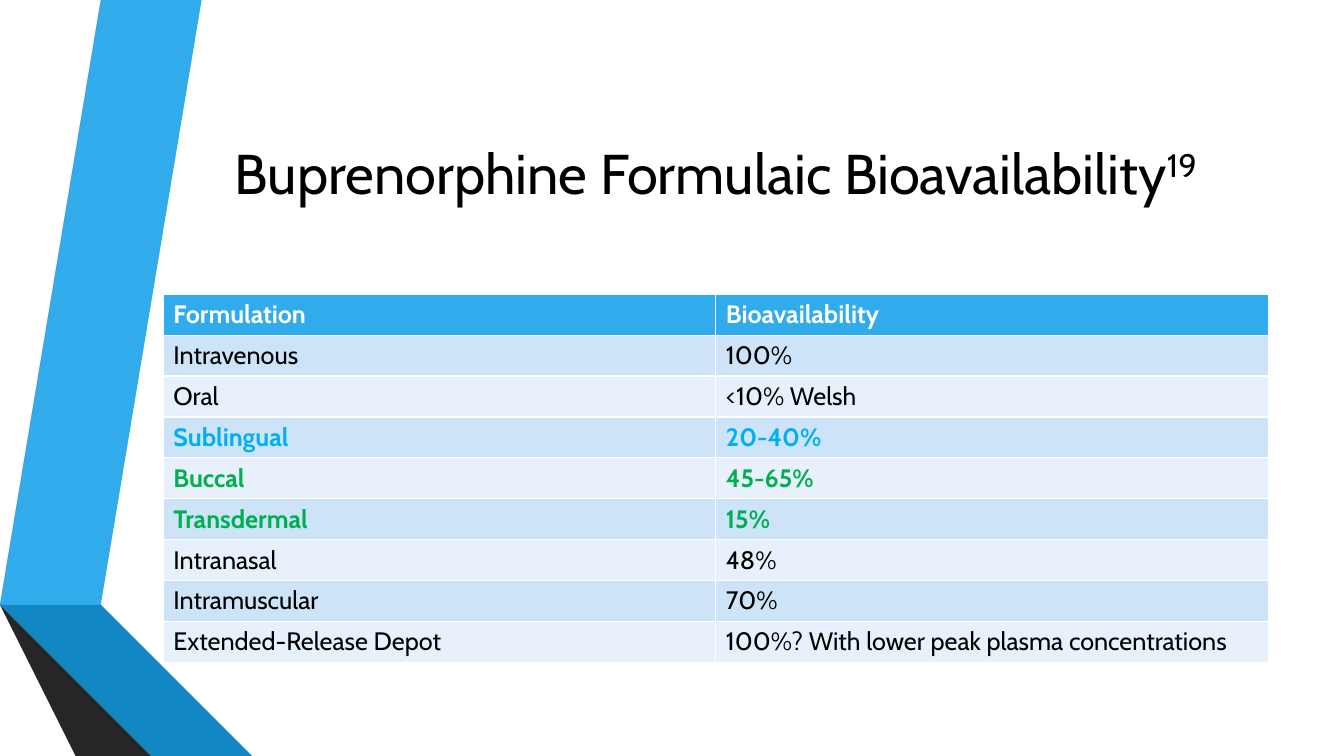
import pptx
import pptx.dml.color
import pptx.enum.text
import pptx.util

Inches = pptx.util.Inches
FONT = "Cabin"
COLORS = {
    "black": "000000",
    "white": "FFFFFF",
    "header": "30ACEC",
    "band_dark": "CDE3F8",
    "band_light": "E8F1FB",
    "sublingual": "00B0F0",
    "green": "00B050",
    "blue": "30ACEC",
    "blue_fold": "1287C3",
    "blue_edge": "0C5A82",
    "gray": "595959",
    "gray_fold": "404040",
    "gray_edge": "262626",
}
RIBBONS = [
    ("blue", [(0.5, 5.78), (0.77, 5.83), (1.73, 0), (1.45, 0)]),
    ("gray", [(1.39, 0), (1.11, 0), (0.16, 5.73), (0.44, 5.77)]),
    ("gray_edge", [(0.16, 5.73), (1.45, 7.5), (1.51, 7.5)]),
    ("blue_edge", [(0.5, 5.79), (2.08, 7.5), (2.14, 7.5)]),
    ("blue_fold", [(0.5, 5.78), (2.14, 7.5), (2.83, 7.5), (0.77, 5.83)]),
    ("gray_fold", [(2.02, 7.5), (0.48, 5.83), (0.43, 5.77), (0.16, 5.73), (1.51, 7.5)]),
]
FORMULATIONS = [
    ("Formulation", "Bioavailability"),
    ("Intravenous", "100%"),
    ("Oral", "<10% Welsh"),
    ("Sublingual", "20-40%"),
    ("Buccal", "45-65%"),
    ("Transdermal", "15%"),
    ("Intranasal", "48%"),
    ("Intramuscular", "70%"),
    ("Extended-Release Depot", "100%? With lower peak plasma concentrations"),
]
HIGHLIGHTS = {
    "Formulation": "white",
    "Sublingual": "sublingual",
    "Buccal": "green",
    "Transdermal": "green",
}


def color(name):
    return pptx.dml.color.RGBColor.from_string(COLORS[name])


def format_run(run, size, color_name, bold=False):
    run.font.name = FONT
    run.font.size = pptx.util.Pt(size)
    run.font.bold = bold
    run.font.color.rgb = color(color_name)


def add_ribbons(slide, left, top):
    for color_name, points in RIBBONS:
        builder = slide.shapes.build_freeform(*points[0], scale=Inches(1))
        builder.add_line_segments(points[1:], close=True)
        shape = builder.convert_to_shape(Inches(left), Inches(top))
        shape.shadow.inherit = False
        shape.fill.solid()
        shape.fill.fore_color.rgb = color(color_name)
        shape.line.fill.background()


def add_title(slide, left, top, width, height):
    shape = slide.shapes.add_textbox(*map(Inches, (left, top, width, height)))
    text_frame = shape.text_frame
    text_frame.word_wrap = True
    text_frame.vertical_anchor = pptx.enum.text.MSO_ANCHOR.MIDDLE
    paragraph = text_frame.paragraphs[0]
    paragraph.text = "Buprenorphine Formulaic Bioavailability"
    paragraph.alignment = pptx.enum.text.PP_ALIGN.CENTER
    reference = paragraph.add_run()
    reference.text = "19"
    for run in paragraph.runs:
        format_run(run, 40, "black")
    reference._r.get_or_add_rPr().set("baseline", "30000")


def add_bioavailability_table(slide, left, top, width, height):
    frame = slide.shapes.add_table(
        len(FORMULATIONS), 2, *map(Inches, (left, top, width, height))
    )
    for row_index, values in enumerate(FORMULATIONS):
        if row_index == 0:
            fill_name = "header"
        else:
            fill_name = "band_dark" if row_index % 2 else "band_light"
        text_color = HIGHLIGHTS.get(values[0], "black")
        for column_index, value in enumerate(values):
            cell = frame.table.cell(row_index, column_index)
            cell.fill.solid()
            cell.fill.fore_color.rgb = color(fill_name)
            cell.text_frame.text = value
            run = cell.text_frame.paragraphs[0].runs[0]
            format_run(run, 18, text_color, values[0] in HIGHLIGHTS)


def main():
    presentation = pptx.Presentation()
    presentation.slide_width = Inches(13.33)
    presentation.slide_height = Inches(7.5)
    slide = presentation.slides.add_slide(presentation.slide_layouts[6])
    add_ribbons(slide, 0, 0)
    add_title(slide, 1.62, 0.75, 10.96, 1.92)
    add_bioavailability_table(slide, 1.62, 2.92, 10.96, 3.65)
    presentation.save("out.pptx")


if __name__ == "__main__":
    main()
